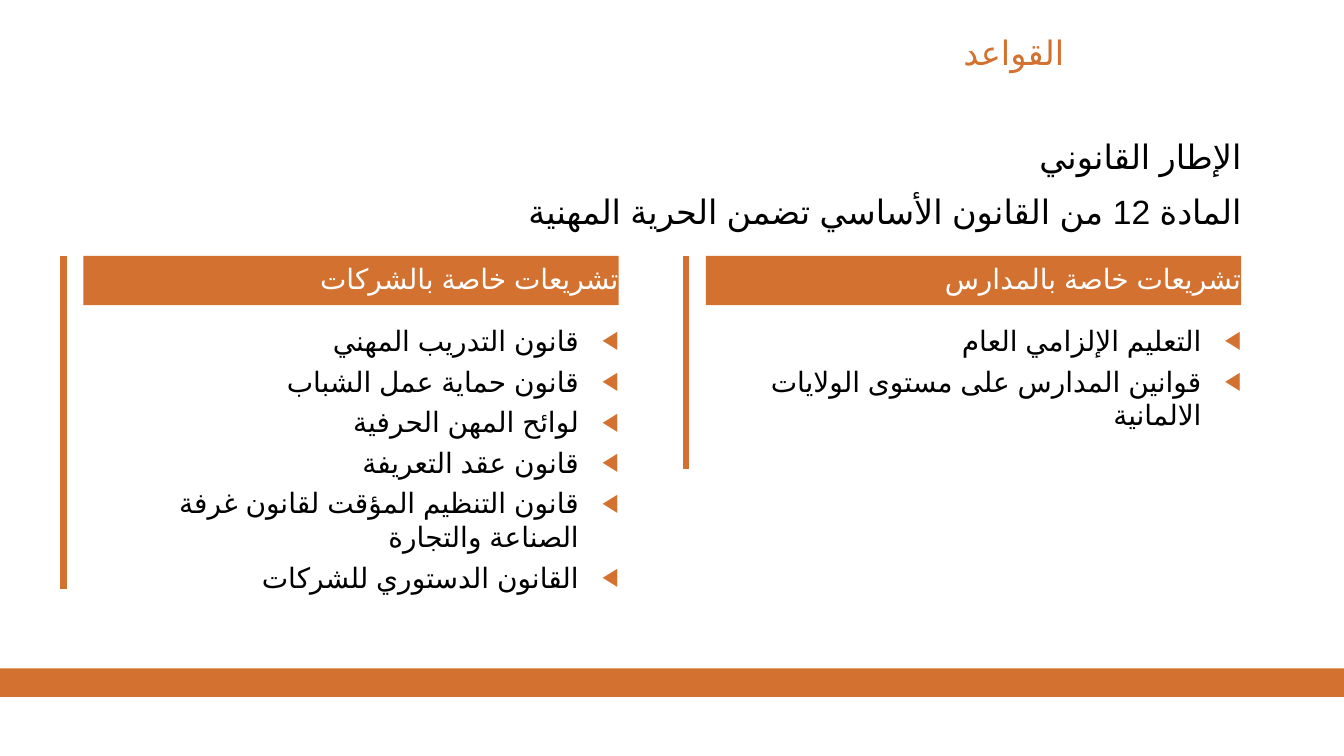
from dataclasses import dataclass

from lxml import etree
from pptx import Presentation
from pptx import util as u
from pptx.dml.color import RGBColor
from pptx.enum import lang, shapes, text
from pptx.oxml import ns


@dataclass(frozen=True)
class Theme:
    font: str = "Calibri"
    script: str = "Arial"
    accent: RGBColor = RGBColor(0xD3, 0x72, 0x30)
    ink: RGBColor = RGBColor(0, 0, 0)
    paper: RGBColor = RGBColor(255, 255, 255)
    large: int = 24
    small: int = 20
    rule: float = 4.5


def put(frame, lines, size, color, theme, gap=0, space=None, mark=None):
    """Fill a frame with right-to-left paragraphs; mark is the bullet colour."""
    for n, line in enumerate(lines):
        para = frame.paragraphs[0] if n == 0 else frame.add_paragraph()
        para.alignment = text.PP_ALIGN.RIGHT
        if n and gap:
            para.space_before = u.Pt(gap)
        if space:
            para.line_spacing = space
        props = para._p.get_or_add_pPr()
        props.set("rtl", "1")
        if mark:
            bullet(props, mark, theme.script)
        run = para.add_run()
        run.text = line
        run.font.size = u.Pt(size)
        run.font.name = theme.font
        run.font.color.rgb = color
        run.font.language_id = lang.MSO_LANGUAGE_ID.ARABIC
        etree.SubElement(run._r.get_or_add_rPr(), ns.qn("a:cs"),
                         typeface=theme.script)


def bullet(props, color, font):
    indent = u.Cm(1)
    props.set("marL", str(indent))
    props.set("indent", str(-indent))
    tint = etree.SubElement(props, ns.qn("a:buClr"))
    etree.SubElement(tint, ns.qn("a:srgbClr"), val=str(color))
    etree.SubElement(props, ns.qn("a:buSzPct"), val="90000")
    etree.SubElement(props, ns.qn("a:buFont"), typeface=font)
    etree.SubElement(props, ns.qn("a:buChar"), char="◀")


class Deck:
    def __init__(self, theme):
        self.theme = theme
        self.file = Presentation()
        self.file.slide_width = u.Cm(33.87)
        self.file.slide_height = u.Cm(19.05)
        self.slide = self.file.slides.add_slide(self.file.slide_layouts[6])

    def prep(self, shape, inset=0):
        frame = shape.text_frame
        frame.word_wrap = True
        frame.margin_left = u.Cm(inset)
        frame.margin_right = frame.margin_top = frame.margin_bottom = 0
        return frame

    def label(self, box, lines, size, color, **style):
        shape = self.slide.shapes.add_textbox(*map(u.Cm, box))
        put(self.prep(shape), lines, size, color, self.theme, **style)

    def block(self, box):
        shape = self.slide.shapes.add_shape(
            shapes.MSO_SHAPE.RECTANGLE, *map(u.Cm, box))
        shape.shadow.inherit = False
        shape.fill.solid()
        shape.fill.fore_color.rgb = self.theme.accent
        shape.line.fill.background()
        return shape

    def header(self, box, title):
        frame = self.prep(self.block(box), inset=1)
        frame.vertical_anchor = text.MSO_ANCHOR.MIDDLE
        put(frame, [title], self.theme.small, self.theme.paper,
            self.theme, space=0.9)

    def rule(self, left, top, height):
        line = self.slide.shapes.add_connector(
            shapes.MSO_CONNECTOR.STRAIGHT,
            *map(u.Cm, (left, top, left, top + height)))
        line.line.color.rgb = self.theme.accent
        line.line.width = u.Pt(self.theme.rule)
        etree.SubElement(line._element.spPr, ns.qn("a:effectLst"))

    def column(self, left, title, items, height):
        """Draw a header, its bulleted list and the rule on their left."""
        top, width = 6.45, 13.49
        self.header((left, top, width, 1.24), title)
        self.label((left, top + 1.7, width, 7.26), items, self.theme.small,
                   self.theme.ink, gap=5, mark=self.theme.accent)
        self.rule(left - 0.5, top, height)


def main():
    theme = Theme()
    deck = Deck(theme)
    deck.block((0, 16.84, 33.87, 0.72))
    deck.label((1.83, 0.81, 24.99, 1.24), ["القواعد"],
               theme.large, theme.accent)
    deck.label((0.58, 3.43, 30.71, 2.79), [
        "الإطار القانوني",
        "المادة 12 من القانون الأساسي تضمن الحرية المهنية",
    ], theme.large, theme.ink, gap=10)
    deck.column(2.1, "تشريعات خاصة بالشركات", [
        "قانون التدريب المهني",
        "قانون حماية عمل الشباب",
        "لوائح المهن الحرفية",
        "قانون عقد التعريفة",
        "قانون التنظيم المؤقت لقانون غرفة الصناعة والتجارة",
        "القانون الدستوري للشركات",
    ], 8.4)
    deck.column(17.79, "تشريعات خاصة بالمدارس", [
        "التعليم الإلزامي العام",
        "قوانين المدارس على مستوى الولايات الالمانية",
    ], 5.38)
    deck.file.save("out.pptx")


if __name__ == "__main__":
    main()
